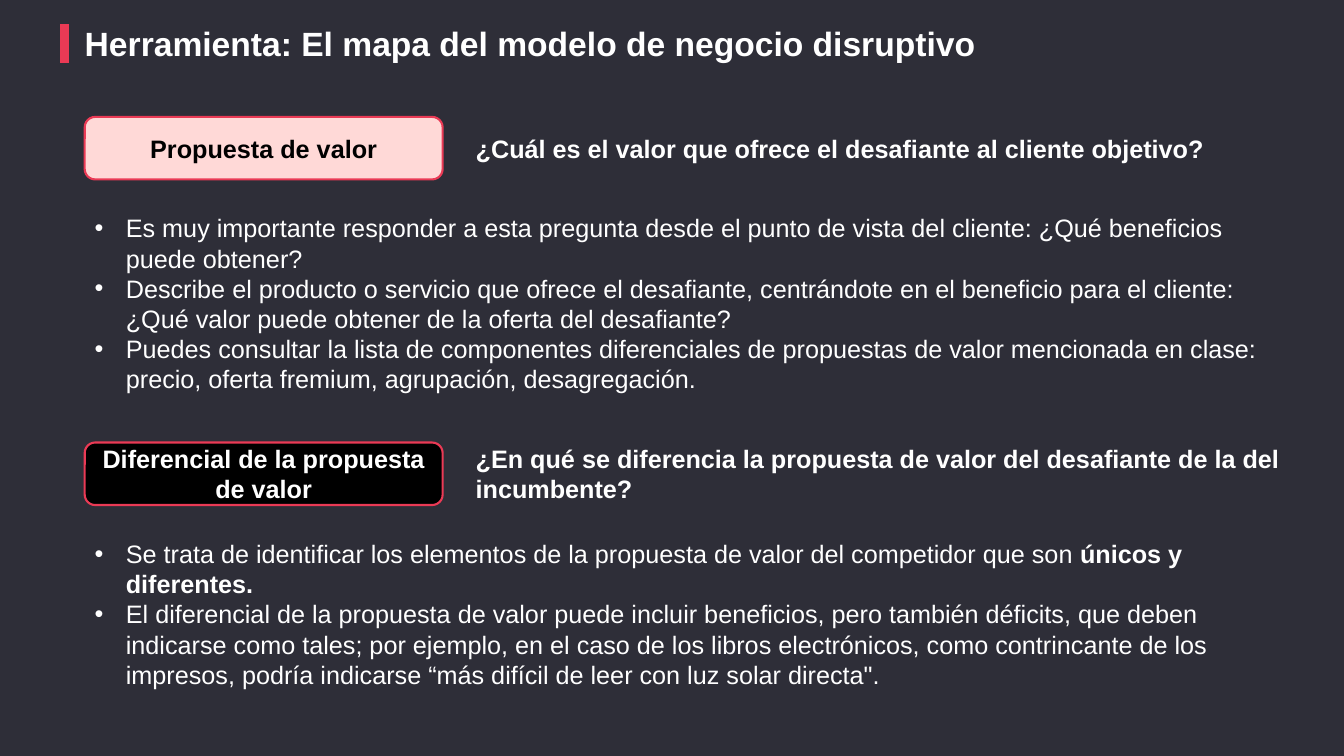
from lxml import etree
from pptx import Presentation, util as u
from pptx.dml.color import RGBColor
from pptx.enum import shapes, text
from pptx.oxml.ns import qn

DARK = RGBColor(0x2E, 0x2E, 0x38)
RED = RGBColor(0xEA, 0x3A, 0x55)
PINK = RGBColor(0xFF, 0xD9, 0xD7)
BLACK = RGBColor(0, 0, 0)
WHITE = RGBColor(0xFF, 0xFF, 0xFF)

# Grid: left margin, question column, first row and distance between sections
LEFT, QUESTION_LEFT = 0.84, 4.62
TOP, SECTION_STEP = 1.16, 3.23
BADGE_W, BADGE_H = 3.55, 0.62
QUESTION_W = 8.23
BULLETS_DROP = 0.9
INDENT = u.Inches(0.31)

# Each section: badge, fill, text colour, question, question height,
# bullets width and height, bullets as lists of (words, bold)
SECTIONS = [
    ("Propuesta de valor", PINK, BLACK,
     "¿Cuál es el valor que ofrece el desafiante al cliente objetivo?", 0.4,
     12.01, 1.92, [
         [("Es muy importante responder a esta pregunta desde el punto de vista del "
           "cliente: ¿Qué beneficios puede obtener?", False)],
         [("Describe el producto o servicio que ofrece el desafiante, centrándote en el "
           "beneficio para el cliente: ¿Qué valor puede obtener de la oferta del "
           "desafiante?", False)],
         [("Puedes consultar la lista de componentes diferenciales de propuestas de valor "
           "mencionada en clase: precio, oferta fremium, agrupación, desagregación.", False)],
     ]),
    ("Diferencial de la propuesta de valor", BLACK, WHITE,
     "¿En qué se diferencia la propuesta de valor del desafiante de la del incumbente?", 0.71,
     12.11, 1.62, [
         [("Se trata de identificar los elementos de la propuesta de valor del competidor "
           "que son ", False), ("únicos y diferentes.", True)],
         [("El diferencial de la propuesta de valor puede incluir beneficios, pero también "
           "déficits, que deben indicarse como tales; por ejemplo, en el caso de los libros "
           "electrónicos, como contrincante de los impresos, podría indicarse “más difícil "
           "de leer con luz solar directa\".", False)],
     ]),
]


def style(run, size=18, color=WHITE, bold=True):
    run.font.name = "Arial"
    run.font.size = u.Pt(size)
    run.font.bold = bold
    run.font.color.rgb = color


def add_text_frame(left, top, width, height):
    box = slide.shapes.add_textbox(*map(u.Inches, (left, top, width, height)))
    box.text_frame.word_wrap = True
    box.text_frame.auto_size = text.MSO_AUTO_SIZE.SHAPE_TO_FIT_TEXT
    return box.text_frame


prs = Presentation()
prs.slide_width, prs.slide_height = u.Inches(13.33), u.Inches(7.5)
slide = prs.slides.add_slide(prs.slide_layouts[6])
slide.background.fill.solid()
slide.background.fill.fore_color.rgb = DARK

# Red mark beside the title
mark = slide.shapes.add_connector(
    shapes.MSO_CONNECTOR.STRAIGHT, *map(u.Inches, (0.64, 0.24, 0.64, 0.63)))
mark.line.color.rgb = RED
mark.line.width = u.Pt(6)
etree.SubElement(mark._element.spPr, qn("a:effectLst"))

# Title
title = add_text_frame(LEFT, 0.25, 10.62, 0.38)
title.margin_left = title.margin_right = title.margin_bottom = 0
title.margin_top = u.Inches(0.04)
title.text = "Herramienta: El mapa del modelo de negocio disruptivo"
title.paragraphs[0].line_spacing = 0.85
title.paragraphs[0].space_after = u.Pt(6)
style(title.paragraphs[0].runs[0], size=24)

for row, (name, fill, ink, ask, ask_h, list_w, list_h, bullets) in enumerate(SECTIONS):
    top = TOP + row * SECTION_STEP

    # Badge
    badge = slide.shapes.add_shape(
        shapes.MSO_SHAPE.ROUNDED_RECTANGLE,
        *map(u.Inches, (LEFT, top, BADGE_W, BADGE_H)))
    badge.shadow.inherit = False
    badge.fill.solid()
    badge.fill.fore_color.rgb = fill
    badge.line.color.rgb = RED
    badge.line.width = u.Pt(1.5)
    badge.text_frame.word_wrap = True
    badge.text_frame.vertical_anchor = text.MSO_ANCHOR.MIDDLE
    badge.text_frame.text = name
    badge.text_frame.paragraphs[0].alignment = text.PP_ALIGN.CENTER
    style(badge.text_frame.paragraphs[0].runs[0], color=ink)

    # Question, centred on the badge
    question = add_text_frame(QUESTION_LEFT, top + (BADGE_H - ask_h) / 2, QUESTION_W, ask_h)
    question.text = ask
    style(question.paragraphs[0].runs[0])

    # Bullets
    advice = add_text_frame(LEFT, top + BULLETS_DROP, list_w, list_h)
    for index, parts in enumerate(bullets):
        item = advice.add_paragraph() if index else advice.paragraphs[0]
        props = item._p.get_or_add_pPr()
        props.set("marL", str(INDENT))
        props.set("indent", str(-INDENT))
        etree.SubElement(props, qn("a:buFont"), typeface="Arial")
        etree.SubElement(props, qn("a:buChar"), char="•")
        for words, bold in parts:
            run = item.add_run()
            run.text = words
            style(run, bold=bold)

prs.save("out.pptx")
